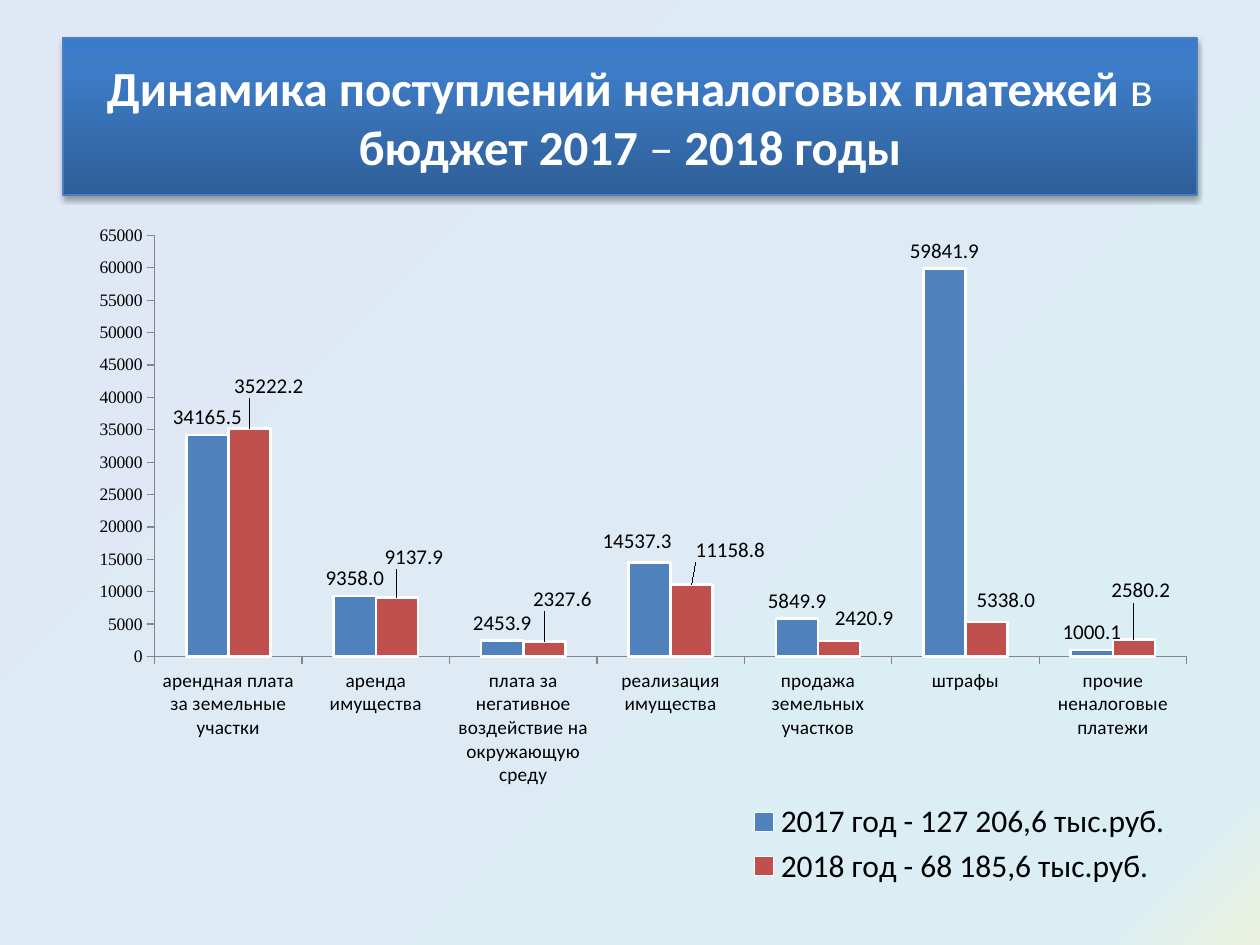
from lxml import etree
from pptx import Presentation, util as u
from pptx.chart.data import CategoryChartData
from pptx.dml.color import RGBColor
from pptx.enum import chart as ch, shapes, text
from pptx.oxml import parse_xml
from pptx.oxml.ns import nsdecls, qn

PX = 914400 // 126
TITLE = [("Динамика поступлений неналоговых платежей", True), (" в ", False),
         ("бюджет 2017", True), (" – ", False), ("2018 годы", True)]
CATEGORIES = ["арендная плата за земельные участки", "аренда имущества",
              "плата за негативное воздействие на окружающую среду",
              "реализация имущества", "продажа земельных участков", "штрафы",
              "прочие неналоговые платежи"]
# shifts: label moves in px from the default place, by point number
SERIES = [
    dict(name="2017 год - 127 206,6 тыс.руб.", color="4F81BD",
         values=[34165.5, 9358, 2453.9, 14537.3, 5849.9, 59841.9, 1000.1],
         shifts={3: (-12, -4)}),
    dict(name="2018 год - 68 185,6 тыс.руб.", color="C0504D",
         values=[35222.2, 9137.9, 2327.6, 11158.8, 2420.9, 5338, 2580.2],
         shifts=dict(enumerate([(19, -25), (17, -23), (18, -25), (38, -17),
                                (25, -5), (19, -4), (7, -32)]))),
]
BACKGROUND = [(0, "EBF1DE"), (8, "DBEEF4"), (100, "E1E8F5")]
TITLE_FILL = [(0, "2F5F99"), (80, "3D7CC7"), (100, "3A7CCB")]
TITLE_BOX = (63, 38, 1134, 157)
CHART_BOX = (64, 224, 1134, 674)


def px(*values):
    return [u.Emu(v * PX) for v in values]


def rgb(value):
    return RGBColor.from_string(value)


def set_font(font, size, name="Calibri", color="000000", bold=False):
    font.size, font.name, font.bold = u.Pt(size), name, bold
    font.color.rgb = rgb(color)


def add_text(p, content, **fmt):
    r = p.add_run()
    r.text = content
    set_font(r.font, **fmt)


def set_gradient(fill, root, stops, angle):
    fill.gradient()
    grad = next(root.iter(qn("a:gradFill")))
    for child in list(grad):
        grad.remove(child)
    gs_list = etree.SubElement(grad, qn("a:gsLst"))
    for pos, color in stops:
        gs = etree.SubElement(gs_list, qn("a:gs"), pos=str(pos * 1000))
        etree.SubElement(gs, qn("a:srgbClr"), val=color)
    etree.SubElement(grad, qn("a:lin"), ang=str(angle * 60000), scaled="0")


def place(element, x, y, w=None, h=None, target=None, after=None):
    """Set a manual layout in fractions of the chart; without w and h, a shift."""
    values = [("layoutTarget", target), ("xMode", w and "edge"),
              ("yMode", w and "edge"), ("x", x), ("y", y), ("w", w), ("h", h)]
    body = "".join(f'<c:{tag} val="{v}"/>' for tag, v in values if v is not None)
    for old in element.findall(qn("c:layout")):
        element.remove(old)
    index = 0 if after is None else element.index(element.find(qn(after))) + 1
    element.insert(index, parse_xml(
        f'<c:layout {nsdecls("c")}><c:manualLayout>{body}'
        '</c:manualLayout></c:layout>'))


prs = Presentation()
prs.slide_width, prs.slide_height = u.Inches(10), u.Inches(7.5)
s = prs.slides.add_slide(prs.slide_layouts[6])
set_gradient(s.background.fill, s.element, BACKGROUND, 225)

# Title banner
sp = s.shapes.add_shape(shapes.MSO_SHAPE.RECTANGLE, *px(*TITLE_BOX))
set_gradient(sp.fill, sp.element, TITLE_FILL, 270)
sp.line.color.rgb, sp.line.width = rgb("4B7EBC"), u.Pt(0.75)
sp.shadow.inherit = False
sp.element.spPr.find(qn("a:effectLst")).append(parse_xml(
    f'<a:outerShdw {nsdecls("a")} blurRad="39370" dist="22860" dir="5400000" '
    'rotWithShape="0"><a:srgbClr val="000000"><a:alpha val="35000"/>'
    '</a:srgbClr></a:outerShdw>'))
tf = sp.text_frame
tf.word_wrap, tf.vertical_anchor = True, text.MSO_ANCHOR.MIDDLE
p = tf.paragraphs[0]
p.alignment = text.PP_ALIGN.CENTER
for content, bold in TITLE:
    add_text(p, content, size=28, color="FFFFFF", bold=bold)

# Column chart
data = CategoryChartData(number_format="0.0")
data.categories = CATEGORIES
for row in SERIES:
    data.add_series(row["name"], row["values"])
chart = s.shapes.add_chart(ch.XL_CHART_TYPE.COLUMN_CLUSTERED,
                           *px(*CHART_BOX), data).chart
chart.has_title = False
set_font(chart.font, 18)
plot = chart.plots[0]
plot.gap_width, plot.overlap, plot.vary_by_categories = 150, 0, False

# Axes
cat, val = chart.category_axis, chart.value_axis
for axis, size, name in [(cat, 11, "Calibri"), (val, 10, "Times New Roman")]:
    set_font(axis.tick_labels.font, size, name)
    axis.major_tick_mark = ch.XL_TICK_MARK.OUTSIDE
    axis.has_major_gridlines = False
    axis.format.line.color.rgb, axis.format.line.width = rgb("868686"), u.Pt(0.75)
cat.tick_label_position = ch.XL_TICK_LABEL_POSITION.LOW
val.minimum_scale, val.maximum_scale, val.major_unit = 0, 65000, 5000
val.tick_labels.number_format = "0"
val.tick_labels.number_format_is_linked = False

# Series and their labels
for series, row in zip(plot.series, SERIES):
    series.format.fill.solid()
    series.format.fill.fore_color.rgb = rgb(row["color"])
    series.format.line.color.rgb, series.format.line.width = rgb("FFFFFF"), u.Pt(1.5)
    series.invert_if_negative = False
    labels = series.data_labels
    labels.show_value = True
    labels.number_format, labels.number_format_is_linked = "0.0", False
    labels.position = ch.XL_LABEL_POSITION.OUTSIDE_END
    set_font(labels.font, 12)
    for i in row["shifts"]:
        label = series.points[i].data_label
        label.position = ch.XL_LABEL_POSITION.OUTSIDE_END
        set_font(label.font, 12)

# Legend
chart.has_legend = True
chart.legend.position = ch.XL_LEGEND_POSITION.RIGHT
chart.legend.include_in_layout = False
set_font(chart.legend.font, 18)

# Manual places of plot area, legend and moved labels
root = chart.element
place(next(root.iter(qn("c:plotArea"))), 0.08, 0.017, 0.91, 0.625, "inner")
place(next(root.iter(qn("c:legend"))), 0.6, 0.85, 0.38, 0.14, after="c:legendPos")
for ser, row in zip(list(root.iter(qn("c:ser"))), SERIES):
    for item in list(ser.iter(qn("c:dLbl"))):
        dx, dy = row["shifts"][int(item.find(qn("c:idx")).get("val"))]
        place(item, round(dx / CHART_BOX[2], 3), round(dy / CHART_BOX[3], 3),
              after="c:idx")

prs.save("out.pptx")
